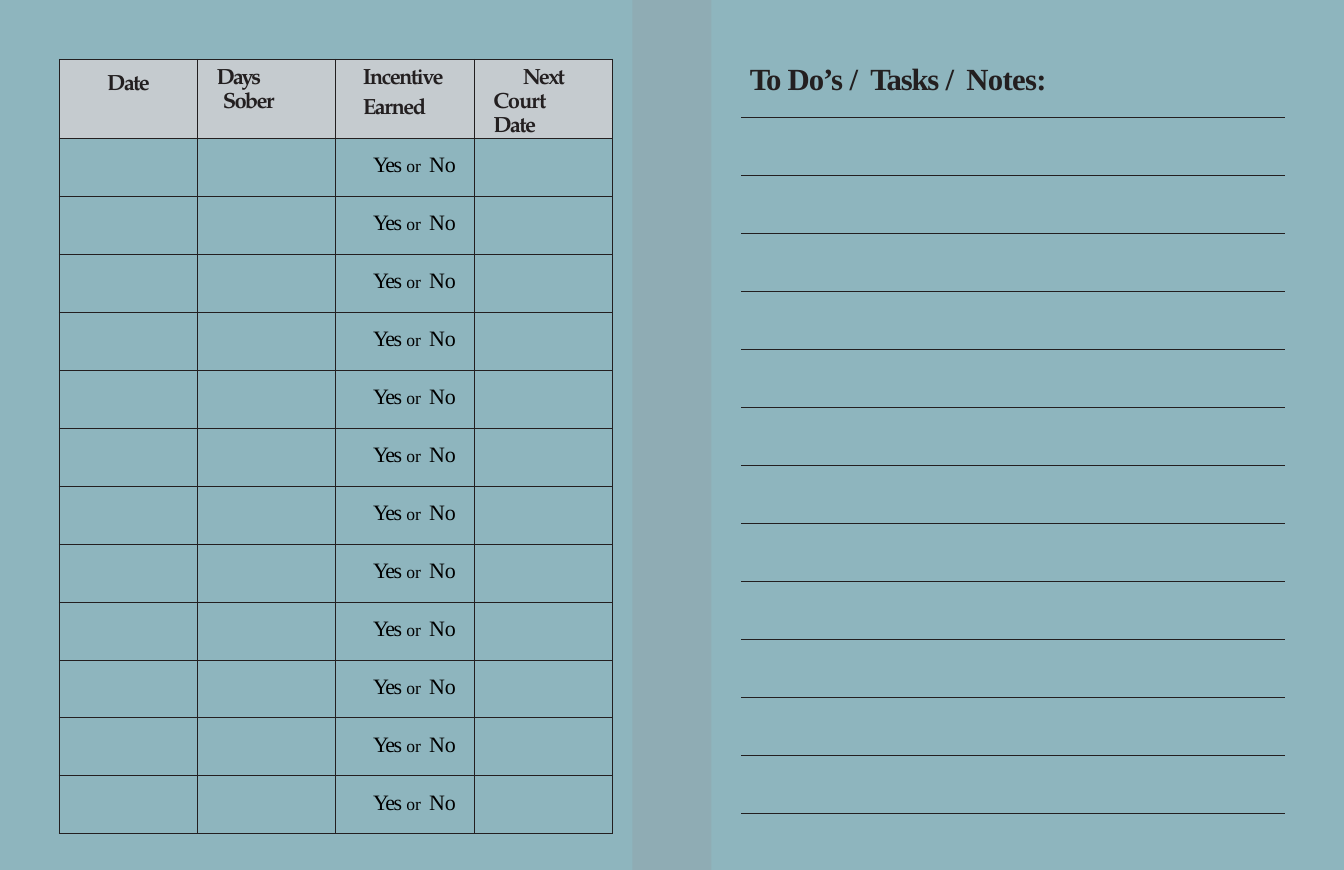
from dataclasses import dataclass
from itertools import pairwise

from lxml import etree
from pptx import Presentation
from pptx.dml.color import RGBColor
from pptx.enum.shapes import MSO_CONNECTOR, MSO_SHAPE
from pptx.enum.text import MSO_AUTO_SIZE, PP_ALIGN
from pptx.oxml.ns import qn
from pptx.util import Pt

LINE = MSO_CONNECTOR.STRAIGHT
RECT = MSO_SHAPE.RECTANGLE
GROW = MSO_AUTO_SIZE.SHAPE_TO_FIT_TEXT
LEFT, MID, RIGHT = PP_ALIGN.LEFT, PP_ALIGN.CENTER, PP_ALIGN.RIGHT
PX = 1524
WIDE, HIGH = 5100, 3300
ROWS, PITCH, COL = 12, 220, 525


@dataclass(frozen=True)
class Theme:
    back: str = "8EB5BE"
    band: str = "949CA1"
    head: str = "C5CBCF"
    ink: str = "231F20"
    black: str = "000000"
    serif: str = "Times New Roman"
    bold: str = "TeX Gyre Pagella"
    title: float = 14
    body: float = 10
    small: float = 8
    rule: float = 0.5


THEME = Theme()
TITLE = dict(size=Pt(THEME.title), name=THEME.serif, bold=True)
HEAD = dict(size=Pt(THEME.body), name=THEME.bold, bold=True)
BODY = dict(size=Pt(THEME.body), name=THEME.serif, bold=False)
SMALL = {**BODY, "size": Pt(THEME.small)}
TIGHT = dict(alignment=LEFT, line_spacing=Pt(11), space_before=Pt(2.9))

HEADS = [
    (60, dict(alignment=MID, space_before=Pt(7.2)), {}, [[("Date", -0.7)]]),
    (24, TIGHT, dict(marL=96, indent=-24, marR=132),
     [[("Days ", -0.9), ("Sober", -0.8)]]),
    (24, TIGHT, dict(marL=132, indent=-30),
     [[("Incentive", -0.7)], [("Earned", -0.7)]]),
    (24, TIGHT, dict(marL=72, indent=112, marR=132),
     [[("Next ", -0.7), ("Court ", -0.5), ("Date", -0.7)]]),
]
CHOICE = [("Yes ", -0.6, BODY), ("or", 0, SMALL), (" ", 1.7, SMALL),
          ("No", 0, BODY)]
NOTES = [("To ", -0.7), ("Do’s ", -0.5), ("/ ", 1),
         ("Tasks ", -0.6), ("/ ", 1), ("Notes:", -0.3)]


def put(item, form):
    for key, val in form.items():
        setattr(item, key, val)


def rgb(code):
    return RGBColor.from_string(code)


def inset(item, top):
    put(item, dict(margin_left=0, margin_top=top * PX,
                   margin_right=0, margin_bottom=0))


def write(para, runs, form, dents, ink):
    put(para, form)
    props = para._p.get_or_add_pPr()
    for key, val in dents.items():
        props.set(key, str(val * PX))
    for text, space, font in runs:
        run = para.add_run()
        run.text = text
        put(run.font, font)
        run.font.color.rgb = rgb(ink)
        run._r.get_or_add_rPr().set("spc", str(round(space * 100)))


def border(cell):
    props = cell._tc.get_or_add_tcPr()
    for side in ("lnL", "lnR", "lnT", "lnB"):
        edge = etree.SubElement(props, qn("a:" + side), w=str(Pt(THEME.rule)))
        fill = etree.SubElement(edge, qn("a:solidFill"))
        etree.SubElement(fill, qn("a:srgbClr"), val=THEME.ink)


def add_log(slide):
    frame = slide.shapes.add_table(ROWS + 1, 4, 225 * PX, 225 * PX,
                                   4 * COL * PX, (225 + ROWS * PITCH) * PX)
    table = frame.table
    put(table, dict(first_row=False, horz_banding=False))
    for col in table.columns:
        col.width = COL * PX
    for num, row in enumerate(table.rows):
        row.height = (PITCH if num else 225) * PX
        for cell in row.cells:
            inset(cell, 0)
            border(cell)
            if num:
                cell.fill.background()
            else:
                cell.fill.solid()
                cell.fill.fore_color.rgb = rgb(THEME.head)
    for col, (top, form, dents, paras) in enumerate(HEADS):
        cell = table.cell(0, col)
        inset(cell, top)
        text = cell.text_frame
        for num, runs in enumerate(paras):
            para = text.add_paragraph() if num else text.paragraphs[0]
            write(para, [(*run, HEAD) for run in runs], form, dents, THEME.ink)
    for num in range(1, ROWS + 1):
        cell = table.cell(num, 2)
        inset(cell, 57)
        write(cell.text_frame.paragraphs[0], CHOICE,
              dict(alignment=RIGHT, space_before=Pt(6.8)),
              dict(marR=70), THEME.black)


def add_rule(slide, left, right, top):
    rule = slide.shapes.add_connector(LINE, left * PX, top * PX,
                                      right * PX, top * PX)
    rule.line.color.rgb = rgb(THEME.ink)
    rule.line.width = Pt(THEME.rule)
    etree.SubElement(rule._element.spPr, qn("a:effectLst"))


def add_title(slide):
    box = slide.shapes.add_textbox(2838 * PX, 216 * PX, 1164 * PX, 156 * PX)
    text = box.text_frame
    put(text, dict(word_wrap=True, auto_size=GROW))
    inset(text, 11)
    write(text.paragraphs[0], [(*run, TITLE) for run in NOTES],
          dict(space_before=Pt(1)), dict(marL=8), THEME.ink)


def add_band(slide, left):
    band = slide.shapes.add_shape(RECT, left * PX, 0, 150 * PX, HIGH * PX)
    band.shadow.inherit = False
    band.line.fill.background()
    band.fill.solid()
    band.fill.fore_color.rgb = rgb(THEME.band)
    tint = band._element.spPr.find(".//" + qn("a:srgbClr"))
    etree.SubElement(tint, qn("a:alpha"), val="33000")


def main():
    deck = Presentation()
    put(deck, dict(slide_width=WIDE * PX, slide_height=HIGH * PX))
    slide = deck.slides.add_slide(deck.slide_layouts[6])
    fill = slide.background.fill
    fill.solid()
    fill.fore_color.rgb = rgb(THEME.back)
    add_log(slide)
    stops = [*range(2813, 4875, COL), 4875]
    for num in range(ROWS + 1):
        for left, right in pairwise(stops):
            add_rule(slide, left, right, 445 + num * PITCH)
    add_title(slide)
    for left in (2550, 2400):
        add_band(slide, left)
    deck.save("out.pptx")


if __name__ == "__main__":
    main()
